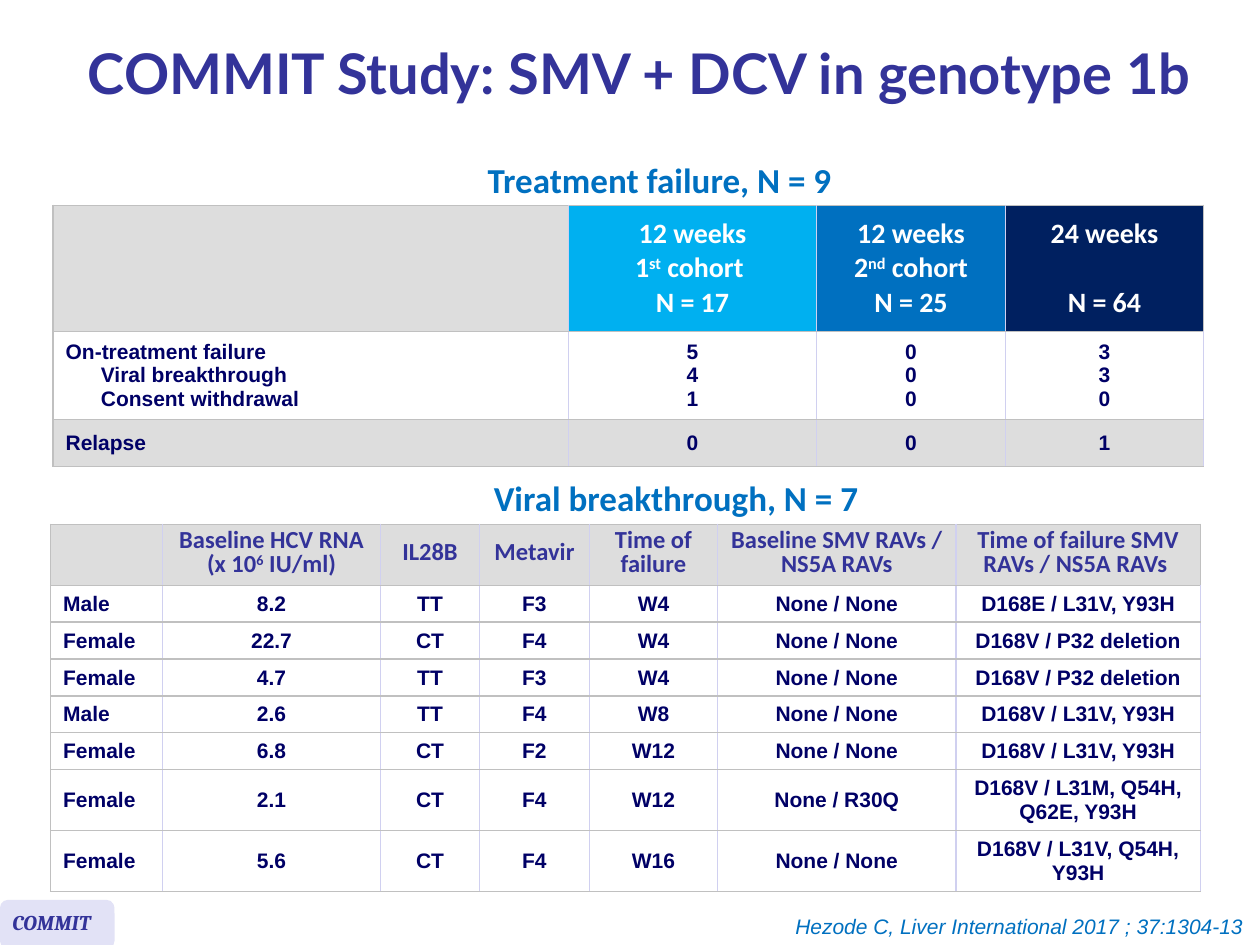
import pptx
import pptx.dml.color
import pptx.enum.shapes
import pptx.enum.text
import pptx.oxml
import pptx.oxml.ns
import pptx.util
from lxml import etree

Cm, Pt = pptx.util.Cm, pptx.util.Pt
ALIGN = pptx.enum.text.PP_ALIGN
ANCHOR = pptx.enum.text.MSO_ANCHOR
NAVY, INDIGO, BLUE, WHITE = "000066", "333399", "0070C0", "FFFFFF"
GREY, RULE, LILAC = "DDDDDD", "C0C0C0", "D0D0F0"

# Text styles: font, size, colour
COHORT = ("Calibri", 16, WHITE)
HEADING = ("Calibri", 14, INDIGO)
DATA = ("Arial", 12, NAVY)

# Cells hold one paragraph per line; "^" surrounds superscripts, "\v" breaks a line
COHORTS = ["12 weeks\n1^st^ cohort \nN = 17", "12 weeks\n2^nd^ cohort\vN = 25", "24 weeks\nN = 64"]
COHORT_FILLS = ["00B0F0", BLUE, "002060"]
FAILURES = [
    [""] + COHORTS,
    ["On-treatment failure\nViral breakthrough\nConsent withdrawal", "5\n4\n1", "0\n0\n0", "3\n3\n0"],
    ["Relapse", "0", "0", "1"],
]
BREAKTHROUGHS = [
    ["", "Baseline HCV RNA\v(x 10^6^ IU/ml)", "IL28B", "Metavir", "Time of\nfailure",
     "Baseline SMV RAVs / NS5A RAVs", "Time of failure SMV RAVs / NS5A RAVs "],
    ["Male", "8.2", "TT", "F3", "W4", "None / None", "D168E / L31V, Y93H"],
    ["Female", "22.7", "CT", "F4", "W4", "None / None", "D168V / P32 deletion"],
    ["Female", "4.7", "TT", "F3", "W4", "None / None", "D168V / P32 deletion"],
    ["Male", "2.6", "TT", "F4", "W8", "None / None", "D168V / L31V, Y93H"],
    ["Female", "6.8", "CT", "F2", "W12", "None / None", "D168V / L31V, Y93H"],
    ["Female", "2.1", "CT", "F4", "W12", "None / R30Q", "D168V / L31M, Q54H, Q62E, Y93H"],
    ["Female", "5.6", "CT", "F4", "W16", "None / None", "D168V / L31V, Q54H, Y93H"],
]


def color(hex_string):
    return pptx.dml.color.RGBColor.from_string(hex_string)


def style_font(font, style, bold=True, italic=False):
    font.name, font.size = style[0], Pt(style[1])
    font.color.rgb = color(style[2])
    font.bold, font.italic = bold, italic


def place(part, box):
    part.left, part.top, part.width, part.height = (Cm(length) for length in box)


def fill_placeholder(placeholder, box, text, style, anchor):
    place(placeholder, box)
    frame = placeholder.text_frame
    frame.text = text
    frame.word_wrap = True
    frame.auto_size = pptx.enum.text.MSO_AUTO_SIZE.NONE
    frame.vertical_anchor = anchor
    line = frame.paragraphs[0]
    line.alignment = ALIGN.CENTER
    line.space_before = Pt(0)
    style_font(line.runs[0].font, style)
    return line


def add_label(shapes, box, text, style, bold, align, wrap):
    label = shapes.add_textbox(*(Cm(length) for length in box))
    frame = label.text_frame
    frame.text = text
    frame.word_wrap = wrap
    frame.paragraphs[0].alignment = align
    style_font(frame.paragraphs[0].runs[0].font, style, bold, italic=True)


def write_cell(cell, text, style, align, spacing):
    cell.vertical_anchor = ANCHOR.MIDDLE
    frame = cell.text_frame
    for number, line in enumerate(text.split("\n")):
        paragraph = frame.paragraphs[0] if number == 0 else frame.add_paragraph()
        paragraph.alignment = align
        if spacing:
            paragraph.line_spacing = Pt(spacing)
        for part, words in enumerate(line.split("^")):
            for piece, fragment in enumerate(words.split("\v")):
                if piece:
                    paragraph.add_line_break()
                if fragment:
                    run = paragraph.add_run()
                    run.text = fragment
                    style_font(run.font, style)
                    if part % 2:
                        run.font._element.set("baseline", "30000")


def border_cell(cell, sides):
    properties = cell._tc.get_or_add_tcPr()
    for side, hex_string in sides.items():
        properties.append(pptx.oxml.parse_xml(
            f'<a:ln{side} {pptx.oxml.ns.nsdecls("a")} w="12700"><a:solidFill>'
            f'<a:srgbClr val="{hex_string}"/></a:solidFill></a:ln{side}>'))


def add_grid(slide, box, rows, widths, heights, header_style, spacing=None):
    frame = slide.shapes.add_table(len(rows), len(widths), *(Cm(length) for length in box))
    table = frame.table
    table.horz_banding = False
    for column, width in zip(table.columns, widths):
        column.width = Cm(width)
    for row, height in zip(table.rows, heights):
        row.height = Cm(height)
    for r, row in enumerate(rows):
        for c, text in enumerate(row):
            cell = table.cell(r, c)
            corner = r == 0 and c == len(row) - 1
            border_cell(cell, {"L": LILAC if c else RULE, "R": RULE if corner else LILAC,
                               "T": RULE, "B": RULE})
            cell.fill.solid()
            cell.fill.fore_color.rgb = color(WHITE if r else GREY)
            write_cell(cell, text, DATA if r else header_style,
                       ALIGN.CENTER if c or r == 0 else ALIGN.LEFT, spacing)
    return table


def add_failure_table(slide, box):
    table = add_grid(slide, box, FAILURES, [10.39, 5, 3.81, 3.99], [2.54, 1.78, 0.94], COHORT)
    for c, fill in enumerate(COHORT_FILLS, start=1):
        table.cell(0, c).fill.fore_color.rgb = color(fill)
    for cell in table.rows[2].cells:
        cell.fill.fore_color.rgb = color(GREY)
    # The 24-week arm has no cohort line
    table.cell(0, 3).text_frame.paragraphs[1].space_before = Pt(19.5)
    # Reasons are indented below the on-treatment total
    for reason in table.cell(1, 0).text_frame.paragraphs[1:]:
        reason._p.get_or_add_pPr().set("marL", str(Cm(0.71)))


def add_breakthrough_table(slide, box):
    add_grid(slide, box, BREAKTHROUGHS, [2.26, 4.39, 2, 2.21, 2.59, 4.8, 4.93],
             [1.23] + [0.74] * 5 + [1.23] * 2, HEADING, spacing=13.8)


def add_study_badge(slide, box):
    left, top, width, height = box
    group = slide.shapes.add_group_shape()
    badge = group.shapes.add_shape(pptx.enum.shapes.MSO_SHAPE.ROUNDED_RECTANGLE,
                                   *(Cm(length) for length in box))
    badge.shadow.inherit = False
    badge.fill.solid()
    badge.fill.fore_color.rgb = color("E2E2F6")
    badge.line.fill.background()
    add_label(group.shapes, (left, top + 0.08, width + 0.18, height - 0.23), "COMMIT",
              ("Cambria", 12, INDIGO), True, ALIGN.LEFT, True)


def main():
    deck = pptx.Presentation()
    deck.slide_width, deck.slide_height = Cm(25.4), Cm(19.05)
    slide = deck.slides.add_slide(deck.slide_layouts[4])
    title, failure_heading, spare_left, breakthrough_heading, spare_right = slide.placeholders
    for spare in (spare_left, spare_right):
        spare._element.getparent().remove(spare._element)

    # Title and table headings
    headline = fill_placeholder(title, (1.3, 0.2, 23.19, 2.72), "COMMIT Study: SMV + DCV in genotype 1b",
                                ("Lato", 32, INDIGO), ANCHOR.MIDDLE)
    headline.line_spacing = 0.85
    subtitle = ("Calibri", 20, BLUE)
    fill_placeholder(failure_heading, (8.1, 3.07, 10.39, 1.6), "Treatment failure, N = 9",
                     subtitle, ANCHOR.TOP)
    fill_placeholder(breakthrough_heading, (8.13, 9.47, 11, 1.6), "Viral breakthrough, N = 7",
                     subtitle, ANCHOR.TOP)

    # Tables
    add_failure_table(slide, (1.07, 4.14, 23.19, 5.26))
    add_breakthrough_table(slide, (1.02, 10.57, 23.18, 7.39))

    # Footer
    add_study_badge(slide, (0, 18.14, 2.31, 0.99))
    add_label(slide.shapes, (15.72, 18.29, 9.6, 0.76), "Hezode C, Liver International 2017 ; 37:1304-13",
              ("Arial", 12, BLUE), False, ALIGN.RIGHT, False)
    deck.save("out.pptx")


if __name__ == "__main__":
    main()
